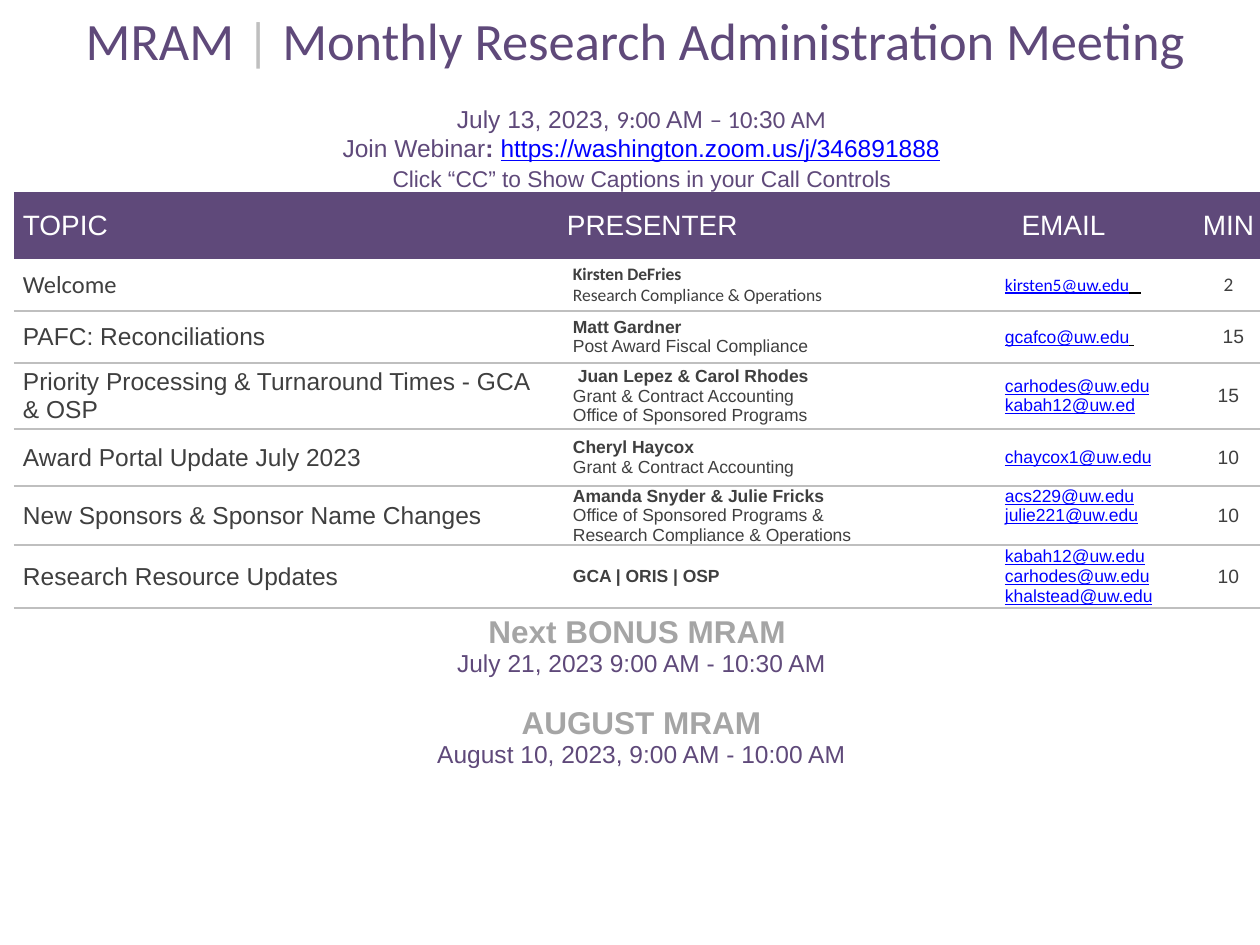
"""Build the monthly meeting agenda slide."""
from dataclasses import dataclass

from lxml.etree import SubElement
from pptx import Presentation
from pptx.dml.color import RGBColor as Rgb
from pptx.enum.text import MSO_ANCHOR as Anchor, PP_ALIGN as Align
from pptx.oxml.ns import qn
from pptx.util import Pt

PX = 914400 / 126
COLUMNS = [544, 447, 183, 81]
ROWS = [64, 118, 67, 52, 52, 66, 57, 59, 63, 190]


@dataclass(frozen=True)
class Theme:
    """Hold the fonts, colours and type sizes."""
    sans: str = "Arial"
    humanist: str = "Calibri"
    purple: str = "5F497A"
    rule: str = "BFBFBF"
    grey: str = "A5A5A5"
    ink: str = "3F3F3F"
    link: str = "0000FF"
    black: str = "000000"
    white: str = "FFFFFF"
    title: int = 30
    month: int = 18
    heading: int = 16
    body: int = 14
    caption: int = 13
    minutes: int = 11
    small: int = 10


THEME = Theme()

AGENDA = [
    ("Welcome", "Kirsten DeFries", ["Research Compliance & Operations"],
     [("kirsten5@uw.edu", "   ")], "2"),
    ("PAFC: Reconciliations", "Matt Gardner", ["Post Award Fiscal Compliance"],
     [("gcafco@uw.edu", " ")], "15"),
    ("Priority Processing & Turnaround Times - GCA & OSP",
     " Juan Lepez & Carol Rhodes",
     ["Grant & Contract Accounting", "Office of Sponsored Programs"],
     [("carhodes@uw.edu", ""), ("kabah12@uw.ed", "")], "15"),
    ("Award Portal Update July 2023", "Cheryl Haycox",
     ["Grant & Contract Accounting"], [("chaycox1@uw.edu", "")], "10"),
    ("New Sponsors & Sponsor Name Changes", "Amanda Snyder & Julie Fricks",
     ["Office of Sponsored Programs &", "Research Compliance & Operations"],
     [("acs229@uw.edu", ""), ("julie221@uw.edu", "")], "10"),
    ("Research Resource Updates", "GCA | ORIS | OSP", [],
     [("kabah12@uw.edu", ""), ("carhodes@uw.edu", ""),
      ("khalstead@uw.edu", "")], "10"),
]
MINUTE_INSETS = {"PAFC: Reconciliations": (19, 0, 9, 0)}
EMAIL_INSETS = {"New Sponsors & Sponsor Name Changes": (0, 0, 15, 19)}


def px(length):
    """Turn pixels into EMU."""
    return round(length * PX)


def add_span(para, text, size=THEME.body, color=THEME.purple,
             font=THEME.sans, bold=False, underline=False):
    """Add formatted text to a paragraph."""
    span = para.add_run()
    span.text = text
    span.font.name = font
    span.font.size = Pt(size)
    span.font.bold = bold
    span.font.underline = underline
    span.font.color.rgb = Rgb.from_string(color)


def set_borders(cell, ruled):
    """Rule the sides named in ruled and clear the others."""
    properties = cell._tc.get_or_add_tcPr()
    for side in "LRTB":
        line = SubElement(properties, qn(f"a:ln{side}"), w=str(Pt(1)))
        if side in ruled:
            fill = SubElement(line, qn("a:solidFill"))
            SubElement(fill, qn("a:srgbClr"), val=THEME.rule)
        else:
            SubElement(line, qn("a:noFill"))


def write_cell(cell, lines, align=Align.LEFT, anchor=Anchor.MIDDLE,
               insets=(9, 0, 9, 0), fill=THEME.white, ruled=""):
    """Fill a cell with lines of spans and return its paragraphs."""
    set_borders(cell, ruled)
    cell.fill.solid()
    cell.fill.fore_color.rgb = Rgb.from_string(fill)
    (cell.margin_left, cell.margin_top,
     cell.margin_right, cell.margin_bottom) = map(px, insets)
    cell.vertical_anchor = anchor
    frame = cell.text_frame
    for index, spans in enumerate(lines):
        para = frame.add_paragraph() if index else frame.paragraphs[0]
        para.alignment = align
        for text, style in spans:
            add_span(para, text, **style)
    return frame.paragraphs


def add_table(page):
    """Add the plain grid that carries the whole page."""
    table = page.shapes.add_table(
        len(ROWS), len(COLUMNS), px(14), px(10),
        px(sum(COLUMNS)), px(sum(ROWS))).table
    table.first_row = table.horz_banding = False
    for column, width in zip(table.columns, COLUMNS):
        column.width = px(width)
    for row, height in zip(table.rows, ROWS):
        row.height = px(height)
    for index in (0, 1, len(ROWS) - 1):
        table.cell(index, 0).merge(table.cell(index, len(COLUMNS) - 1))
    return table


def write_opening(table):
    """Write the title and the meeting details."""
    title = dict(size=THEME.title, font=THEME.humanist)
    write_cell(table.cell(0, 0), [[
        ("MRAM ", title), ("|", title | dict(color=THEME.rule)),
        (" Monthly Research Administration Meeting ", title)]],
        Align.CENTER, Anchor.BOTTOM)
    humanist = dict(font=THEME.humanist)
    paras = write_cell(table.cell(1, 0), [
        [("July 13, 2023, ", {}), ("9:00 ", humanist), ("AM ", {}),
         ("– 10:", humanist), ("3", {}), ("0 AM", humanist)],
        [("Join Webinar", {}), (": ", dict(bold=True)),
         ("https://washington.zoom.us/j/346891888",
          dict(color=THEME.link, underline=True))],
        [("Click “CC” to Show Captions in your Call Controls",
          dict(size=THEME.caption))]], Align.CENTER, Anchor.BOTTOM)
    paras[-1].line_spacing = 1.15


def write_headings(table):
    """Write the column headings."""
    style = dict(size=THEME.heading, color=THEME.white)
    for column, text in enumerate(["TOPIC", "PRESENTER", " EMAIL", "MIN"]):
        align = Align.CENTER if text == "MIN" else Align.LEFT
        write_cell(table.cell(2, column), [[(text, style)]], align,
                   fill=THEME.purple)


def write_agenda(table):
    """Write one row for each topic."""
    for index, (topic, people, offices, emails, minutes) in enumerate(AGENDA):
        cells = table.rows[index + 3].cells
        ruled = "TB" if index else "B"
        font = THEME.sans if index else THEME.humanist
        base = dict(font=font, color=THEME.ink)
        small = base | dict(size=THEME.small)
        link = small | dict(color=THEME.link, underline=True)
        write_cell(cells[0], [[(topic, base)]], ruled=ruled)
        write_cell(cells[1], [[(people, small | dict(bold=True))]]
                   + [[(office, small)] for office in offices],
                   insets=(15, 0, 15, 0), ruled=ruled)
        write_cell(cells[2], [
            [(text, style) for text, style in
             ((email, link), (tail, link | dict(color=THEME.black))) if text]
            for email, tail in emails],
            insets=EMAIL_INSETS.get(topic, (0, 0, 15, 0)), ruled=ruled)
        write_cell(cells[3], [[(minutes, base | dict(size=THEME.minutes))]],
                   Align.CENTER, ruled=ruled,
                   insets=MINUTE_INSETS.get(topic, (9, 0, 9, 0)))


def write_upcoming(table):
    """Write the dates of the next meetings."""
    month = dict(size=THEME.month, color=THEME.grey, bold=True)
    paras = write_cell(table.cell(len(ROWS) - 1, 0), [
        [("Next BONUS MRAM ", month)],
        [("July 21, 2023 9:00 AM - 10:30 AM", {})],
        [("AUGUST MRAM", month)],
        [("August 10, 2023, 9:00 AM - 10:00 AM", {})]],
        Align.CENTER, insets=(9, 0, 9, 22), ruled="T")
    paras[2].space_before = Pt(16)


def main():
    """Build and save the deck."""
    deck = Presentation()
    deck.slide_width, deck.slide_height = px(1260), px(945)
    page = deck.slides.add_slide(deck.slide_layouts[6])
    table = add_table(page)
    write_opening(table)
    write_headings(table)
    write_agenda(table)
    write_upcoming(table)
    deck.save("out.pptx")


if __name__ == "__main__":
    main()
